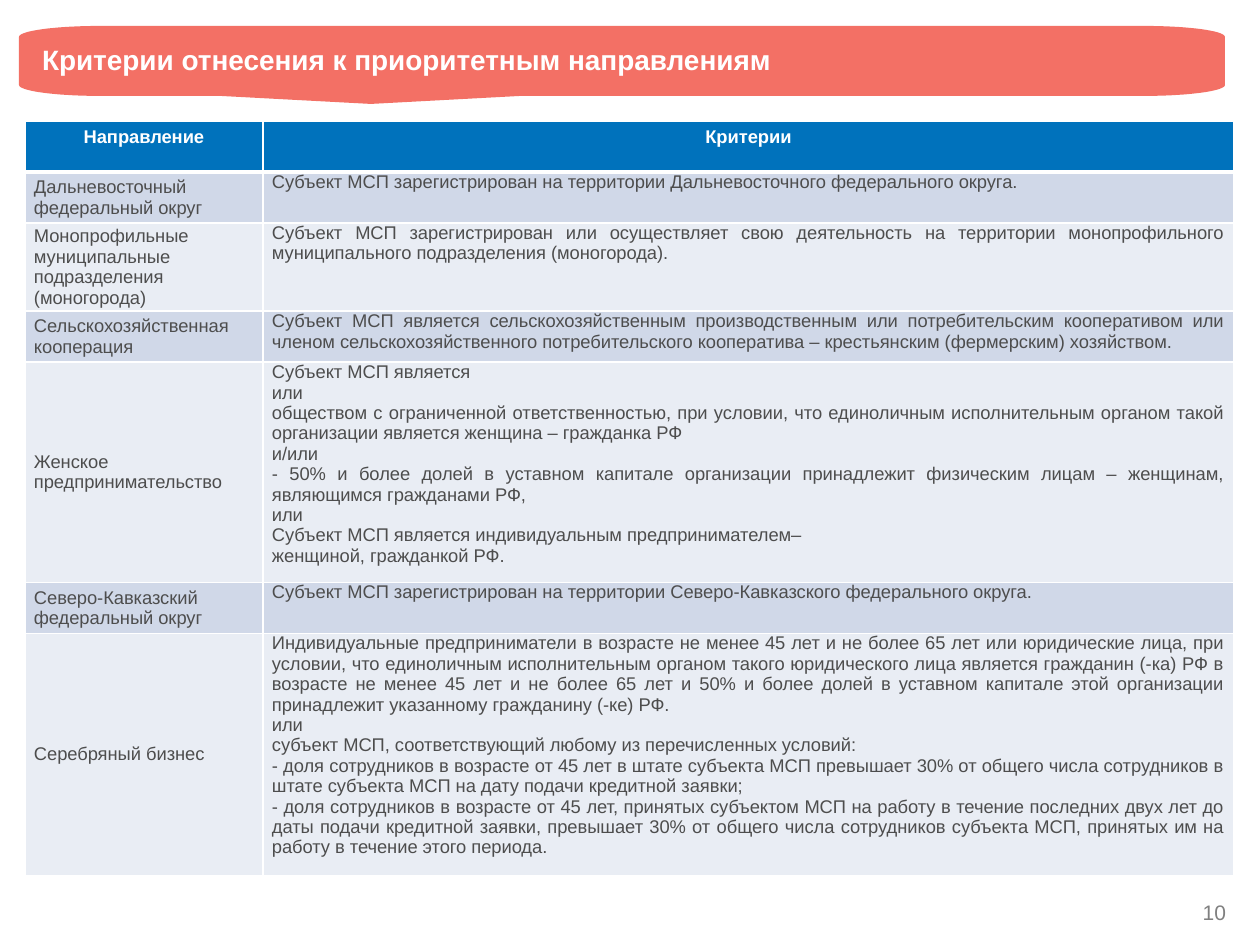
from dataclasses import dataclass
from math import cos, radians, sin

from lxml import etree
from pptx import Presentation
from pptx.dml.color import RGBColor
from pptx.enum.text import MSO_ANCHOR, MSO_AUTO_SIZE, PP_ALIGN
from pptx.oxml.ns import qn
from pptx.util import Inches, Pt

LEFT, MID, RIGHT, FULL = PP_ALIGN.LEFT, PP_ALIGN.CENTER, PP_ALIGN.RIGHT, PP_ALIGN.JUSTIFY
TOP, CENTER = MSO_ANCHOR.TOP, MSO_ANCHOR.MIDDLE
FIXED = MSO_AUTO_SIZE.NONE
UNIT = Inches(1) / 126


@dataclass(frozen=True)
class Theme:
    font: str = "Arial"
    white: str = "FFFFFF"
    coral: str = "F37065"
    blue: str = "0072BC"
    ink: str = "4D4D4D"
    gray: str = "808080"
    bands: tuple = ("D0D8E8", "E9EDF4")
    title: float = 16
    cell: float = 10.5
    page: float = 12


THEME = Theme()
TITLE = "Критерии отнесения к приоритетным направлениям"
HEADS = ("Направление", "Критерии")
COLS = (238, 971)
HEAD = 51
ROWS = (
    (51, "Дальневосточный федеральный округ",
     ("Субъект МСП зарегистрирован на территории Дальневосточного федерального округа.",)),
    (82, "Монопрофильные муниципальные подразделения (моногорода)",
     ("Субъект МСП зарегистрирован или осуществляет свою деятельность на территории "
      "монопрофильного муниципального подразделения (моногорода).",)),
    (51, "Сельскохозяйственная кооперация",
     ("Субъект МСП является сельскохозяйственным производственным или потребительским "
      "кооперативом или членом сельскохозяйственного потребительского кооператива – "
      "крестьянским (фермерским) хозяйством.",)),
    (204, "Женское предпринимательство",
     ("Субъект МСП является",
      "или",
      "обществом с ограниченной ответственностью, при условии, что единоличным "
      "исполнительным органом такой организации является женщина – гражданка РФ",
      "и/или",
      "- 50% и более долей в уставном капитале организации принадлежит физическим лицам – "
      "женщинам, являющимся гражданами РФ,",
      "или",
      "Субъект МСП является индивидуальным предпринимателем–",
      "женщиной, гражданкой РФ.")),
    (51, "Северо-Кавказский федеральный округ",
     ("Субъект МСП зарегистрирован на территории Северо-Кавказского федерального округа.",)),
    (224, "Серебряный бизнес",
     ("Индивидуальные предприниматели в возрасте не менее 45 лет и не более 65 лет или "
      "юридические лица, при условии, что единоличным исполнительным органом такого "
      "юридического лица является гражданин (-ка) РФ в возрасте не менее 45 лет и не более "
      "65 лет и 50% и более долей в уставном капитале этой организации принадлежит "
      "указанному гражданину (-ке) РФ.",
      "или",
      "субъект МСП, соответствующий любому из перечисленных условий:",
      "- доля сотрудников в возрасте от 45 лет в штате субъекта МСП превышает 30% от общего "
      "числа сотрудников в штате субъекта МСП на дату подачи кредитной заявки;",
      "- доля сотрудников в возрасте от 45 лет, принятых субъектом МСП на работу в течение "
      "последних двух лет до даты подачи кредитной заявки, превышает 30% от общего числа "
      "сотрудников субъекта МСП, принятых им на работу в течение этого периода.")),
)


def px(count):
    return round(count * UNIT)


def tint(code):
    return RGBColor.from_string(code)


def write(frame, lines, size, color, bold=False, align=LEFT, space=None):
    for at, line in enumerate(lines):
        para = frame.paragraphs[0] if at == 0 else frame.add_paragraph()
        para.alignment = align
        if space:
            para.line_spacing = space
        run = para.add_run()
        run.text = line
        font = run.font
        font.name, font.size, font.bold = THEME.font, Pt(size), bold
        font.color.rgb = tint(color)


def inset(part, side, edge):
    part.margin_left = part.margin_right = px(side)
    part.margin_top = part.margin_bottom = px(edge)


def place(shape, box):
    shape.left, shape.top, shape.width, shape.height = map(px, box)


def banner(slide, box):
    x, y, w, h = box
    rx, ry = 81, 11

    def bend(cx, cy, start):
        return [(px(cx + rx * cos(radians(a))), px(cy + ry * sin(radians(a))))
                for a in range(start, start + 91, 5)]

    tail = [(px(x + dx), px(y + h + dy)) for dx, dy in ((502, 0), (352, 8), (201, 0))]
    dots = (bend(x + rx, y + ry, 180) + bend(x + w - rx, y + ry, 270)
            + bend(x + w - rx, y + h - ry, 0) + tail + bend(x + rx, y + h - ry, 90))
    build = slide.shapes.build_freeform(*dots[0])
    build.add_line_segments(dots[1:], close=True)
    shape = build.convert_to_shape()
    shape.shadow.inherit = False
    shape.fill.solid()
    shape.fill.fore_color.rgb = tint(THEME.coral)
    shape.line.fill.background()

    title = slide.shapes.title
    place(title, box)
    title.element.getparent().append(title.element)
    frame = title.text_frame
    frame.auto_size, frame.word_wrap, frame.vertical_anchor = FIXED, True, CENTER
    inset(frame, 23, 15)
    write(frame, (TITLE,), THEME.title, THEME.white, bold=True, space=0.9)


def border(cell, base):
    props = cell._tc.get_or_add_tcPr()
    for side, width in (("L", 1), ("R", 1), ("T", 1), ("B", base)):
        line = etree.SubElement(props, qn("a:ln" + side), w=str(Pt(width)))
        fill = etree.SubElement(line, qn("a:solidFill"))
        etree.SubElement(fill, qn("a:srgbClr"), val=THEME.white)


def paint(cell, lines, fill, color, anchor=TOP, pad=(9, 0), base=1, **style):
    border(cell, base)
    cell.fill.solid()
    cell.fill.fore_color.rgb = tint(fill)
    cell.vertical_anchor = anchor
    inset(cell, *pad)
    write(cell.text_frame, lines, THEME.cell, color, **style)


def grid(slide, left, top):
    highs = [HEAD] + [row[0] for row in ROWS]
    box = map(px, (left, top, sum(COLS), sum(highs)))
    table = slide.shapes.add_table(len(highs), len(COLS), *box).table
    for col, width in zip(table.columns, COLS):
        col.width = px(width)
    for row, high in zip(table.rows, highs):
        row.height = px(high)
    for at, head in enumerate(HEADS):
        paint(table.cell(0, at), (head,), THEME.blue, THEME.white,
              pad=(12, 6), base=3, bold=True, align=MID)
    for at, (_, name, terms) in enumerate(ROWS):
        band = THEME.bands[at % 2]
        paint(table.cell(at + 1, 0), (name,), band, THEME.ink, anchor=CENTER, align=FULL)
        paint(table.cell(at + 1, 1), terms, band, THEME.ink, align=FULL)


def folio(slide, box):
    frame = slide.shapes.add_textbox(*map(px, box)).text_frame
    frame.word_wrap = True
    inset(frame, 0, 0)
    write(frame, ("10",), THEME.page, THEME.gray, align=RIGHT, space=Pt(12.7))


def main():
    deck = Presentation()
    deck.slide_width, deck.slide_height = Inches(10), Inches(7.5)
    slide = deck.slides.add_slide(deck.slide_layouts[5])
    folio(slide, (1187, 903, 39, 20))
    grid(slide, 25, 121)
    banner(slide, (19, 26, 1206, 70))
    deck.save("out.pptx")


if __name__ == "__main__":
    main()
